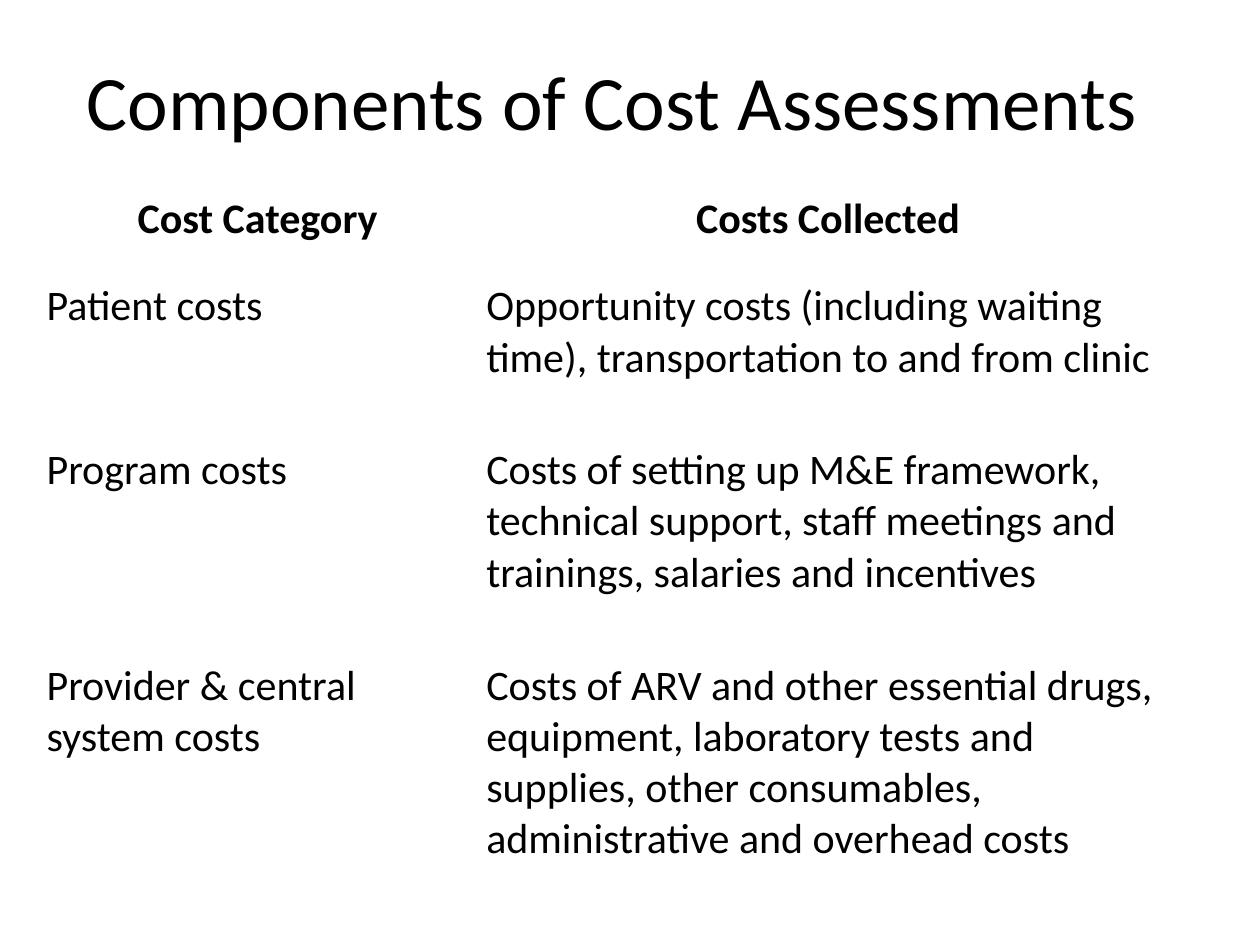
from lxml import etree
from pptx import Presentation
from pptx.dml.color import RGBColor
from pptx.enum.text import MSO_ANCHOR, PP_ALIGN
from pptx.oxml.ns import qn
from pptx.util import Inches, Pt

CENTER, LEFT = PP_ALIGN.CENTER, PP_ALIGN.LEFT
MIDDLE = MSO_ANCHOR.MIDDLE
BLACK = RGBColor(0x00, 0x00, 0x00)
WHITE = RGBColor(0xFF, 0xFF, 0xFF)
FONT = "Calibri"

TITLE = "Components of Cost Assessments "
TITLE_BOX = (0.55, 0.25, 8.62, 1.09)
ROWS = [
    ("Cost Category", "Costs Collected "),
    ("Patient costs",
     "Opportunity costs (including waiting time), transportation to and from clinic"),
    ("Program costs",
     "Costs of setting up M&E framework, technical support, staff meetings and "
     "trainings, salaries and incentives"),
    ("Provider & central system costs",
     "Costs of ARV and other essential drugs, equipment, laboratory tests and "
     "supplies, other consumables, administrative and overhead costs"),
]
TABLE_LEFT, TABLE_TOP = 0.3, 1.5
COLUMN_WIDTHS = (3.49, 5.64)
ROW_HEIGHTS = (0.69, 1.3, 1.71, 2.08)
CELL_FORMAT = {
    "margin_left": Inches(0.07), "margin_right": Inches(0.07),
    "margin_top": Inches(0.04), "margin_bottom": Inches(0.04),
}


def apply_format(target, values):
    """Set each named attribute on the target."""
    for name, value in values.items():
        setattr(target, name, value)


def write_text(frame, text, size, alignment, bold=False):
    """Write one formatted paragraph."""
    frame.word_wrap = True
    paragraph = frame.paragraphs[0]
    paragraph.alignment = alignment
    run = paragraph.add_run()
    run.text = text
    apply_format(run.font, {"name": FONT, "size": Pt(size), "bold": bold})
    run.font.color.rgb = BLACK


def add_borders(cell, widths):
    """Draw white borders, with a width in points for each side."""
    properties = cell._tc.get_or_add_tcPr()
    for side, width in widths.items():
        line = etree.SubElement(properties, qn(f"a:ln{side}"), w=str(Pt(width)))
        fill = etree.SubElement(line, qn("a:solidFill"))
        etree.SubElement(fill, qn("a:srgbClr"), val=str(WHITE))


def add_title(slide):
    """Place and format the title placeholder."""
    title = slide.shapes.title
    left, top, width, height = map(Inches, TITLE_BOX)
    apply_format(title, {"left": left, "top": top, "width": width, "height": height})
    title.text_frame.vertical_anchor = MIDDLE
    write_text(title.text_frame, TITLE, 44, CENTER)


def add_cost_table(slide):
    """Build the table of cost categories."""
    table = slide.shapes.add_table(
        len(ROWS), len(COLUMN_WIDTHS), Inches(TABLE_LEFT), Inches(TABLE_TOP),
        Inches(sum(COLUMN_WIDTHS)), Inches(sum(ROW_HEIGHTS))).table
    apply_format(table, {"first_row": True, "horz_banding": False})
    for column, width in zip(table.columns, COLUMN_WIDTHS):
        column.width = Inches(width)
    for row_index, (row, height, texts) in enumerate(zip(table.rows, ROW_HEIGHTS, ROWS)):
        row.height = Inches(height)
        is_header = row_index == 0
        for cell, text in zip(row.cells, texts):
            apply_format(cell, CELL_FORMAT)
            add_borders(cell, {"L": 1, "R": 1, "T": 3 if row_index == 1 else 1,
                               "B": 3 if is_header else 1})
            cell.fill.solid()
            cell.fill.fore_color.rgb = WHITE
            write_text(cell.text_frame, text, 24, CENTER if is_header else LEFT, is_header)


def main():
    """Build the cost assessment slide."""
    presentation = Presentation()
    apply_format(presentation, {"slide_width": Inches(10), "slide_height": Inches(7.5)})
    slide = presentation.slides.add_slide(presentation.slide_layouts[5])
    add_cost_table(slide)
    add_title(slide)
    presentation.save("out.pptx")


if __name__ == "__main__":
    main()
